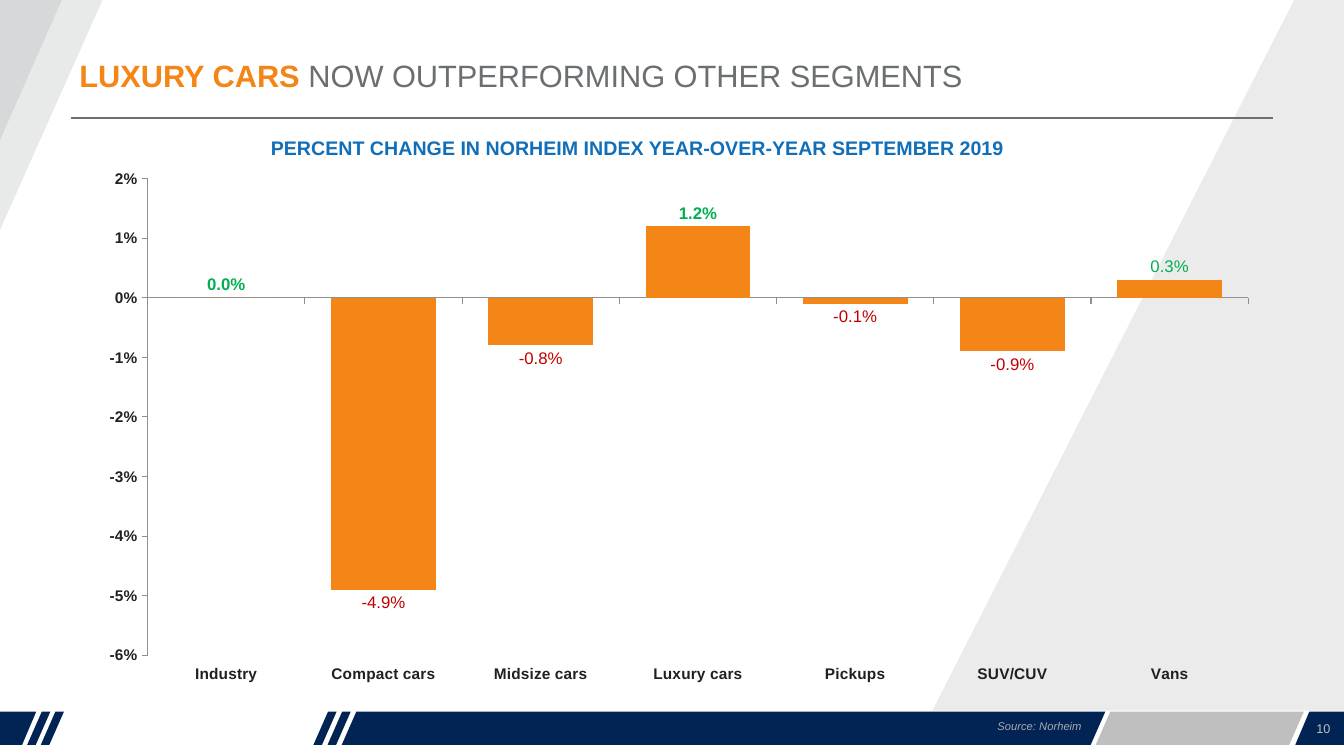
from lxml import etree
from pptx import Presentation, util as u
from pptx.chart.data import CategoryChartData
from pptx.dml.color import RGBColor
from pptx.enum import chart as ch, shapes, text
from pptx.oxml import parse_xml
from pptx.oxml.ns import nsdecls, qn

NAVY, ORANGE, GREY, SILVER = "022454", "F38617", "6C6F71", "BFBFBF"
GREEN, RED, AXIS = "00B050", "C00000", "909090"
CELL = 0.1  # inches per grid column and row


def rgb(value):
    return RGBColor.from_string(value)


def grid(cells):
    return u.Inches(cells * CELL)


def style_font(font, color, **formats):
    for name, value in {"name": "Arial", "bold": False, **formats}.items():
        setattr(font, name, u.Pt(value) if name == "size" else value)
    font.color.rgb = rgb(color)


class Deck:
    def __init__(self, cols, rows):
        self.prs = Presentation()
        self.prs.slide_width, self.prs.slide_height = grid(cols), grid(rows)
        self.s = self.prs.slides.add_slide(self.prs.slide_layouts[6])

    def polygon(self, points, color, alpha=None):
        start, *rest = [(grid(x), grid(y)) for x, y in points]
        builder = self.s.shapes.build_freeform(*start)
        builder.add_line_segments(rest, close=True)
        sp = builder.convert_to_shape()
        sp.shadow.inherit = False
        sp.fill.solid()
        sp.fill.fore_color.rgb = rgb(color)
        sp.line.fill.background()
        if alpha is not None:
            clr = sp.fill._xPr.find(".//" + qn("a:srgbClr"))
            etree.SubElement(clr, qn("a:alpha"), val=str(alpha * 1000))

    def rule(self, x1, x2, y, color):
        line = self.s.shapes.add_connector(
            shapes.MSO_CONNECTOR.STRAIGHT, grid(x1), grid(y), grid(x2), grid(y))
        line.line.color.rgb = rgb(color)
        line.line.width = u.Pt(1)
        etree.SubElement(line._element.spPr, qn("a:effectLst"))

    def text(self, box, runs, align="LEFT", anchor="MIDDLE", wrap=True, spacing=1.0):
        tf = self.s.shapes.add_textbox(*map(grid, box)).text_frame
        tf.word_wrap = wrap
        tf.vertical_anchor = getattr(text.MSO_ANCHOR, anchor)
        p = tf.paragraphs[0]
        p.alignment = getattr(text.PP_ALIGN, align)
        p.line_spacing = spacing
        for words, color, formats in runs:
            r = p.add_run()
            r.text = words
            style_font(r.font, color, **formats)

    def columns(self, box, values, layout, light_labels):
        data = CategoryChartData(number_format="0.0%")
        data.categories = list(values)
        data.add_series("Series 1", values.values())
        chart = self.s.shapes.add_chart(
            ch.XL_CHART_TYPE.COLUMN_CLUSTERED, *map(grid, box), data).chart
        chart.has_title = chart.has_legend = False
        style_font(chart.font, "414141", size=18)

        # Axes
        for axis in (chart.category_axis, chart.value_axis):
            axis.has_major_gridlines = False
            axis.major_tick_mark = ch.XL_TICK_MARK.OUTSIDE
            axis.format.line.color.rgb = rgb(AXIS)
            axis.format.line.width = u.Pt(0.75)
            style_font(axis.tick_labels.font, "202020", size=11, bold=True)
        chart.category_axis.tick_label_position = ch.XL_TICK_LABEL_POSITION.LOW
        scale = {"minimum_scale": -0.06, "maximum_scale": 0.02, "major_unit": 0.01}
        for name, value in scale.items():
            setattr(chart.value_axis, name, value)
        labels = chart.value_axis.tick_labels
        labels.number_format, labels.number_format_is_linked = "0%", False

        # Columns
        plot = chart.plots[0]
        plot.gap_width, plot.vary_by_categories = 50, False
        series = plot.series[0]
        series.invert_if_negative = False
        series.format.fill.solid()
        series.format.fill.fore_color.rgb = rgb(ORANGE)

        # Value labels
        labels = series.data_labels
        labels.show_value = True
        labels.number_format, labels.number_format_is_linked = "0.0%", False
        labels.position = ch.XL_LABEL_POSITION.OUTSIDE_END
        style_font(labels.font, GREEN, size=12, bold=True)
        for i, (name, value) in enumerate(values.items()):
            if name in light_labels:
                label = series.points[i].data_label
                r = label.text_frame.paragraphs[0].add_run()
                r.text = f"{value:.1%}"
                style_font(r.font, RED if value < 0 else GREEN, size=12)
                label.position = ch.XL_LABEL_POSITION.OUTSIDE_END

        # Inner plot area as shares of the chart
        area = chart._chartSpace.chart.plotArea
        for old in area.findall(qn("c:layout")):
            area.remove(old)
        places = "".join(f'<c:{k} val="{v}"/>' for k, v in zip("xywh", layout))
        area.insert(0, parse_xml(
            f'<c:layout {nsdecls("c")}><c:manualLayout><c:layoutTarget val="inner"/>'
            f'<c:xMode val="edge"/><c:yMode val="edge"/>{places}'
            "</c:manualLayout></c:layout>"))


def main():
    deck = Deck(133.33, 75)

    # Background wedge and title rule
    deck.polygon([(135.1, -13.2), (135.4, 70.5), (92.5, 70.5)], "D9D9D9", 50)
    deck.rule(7, 126.3, 11.7, GREY)

    # Slanted footer bands: bottom-left and bottom-right columns
    top, bottom, slant, stripe = 70.6, 73.9, 1.45, 0.85
    bands = [(x, x + stripe, NAVY) for x in (2.7, 4.05, 31.1, 32.5)]
    bands += [(33.9, 108.2, NAVY), (108.7, 127.9, SILVER)]
    for left, right, color in bands:
        deck.polygon([(left + slant, top), (right + slant, top),
                      (right, bottom), (left, bottom)], color)
    deck.polygon([(-1, top), (3.6, top), (2.2, bottom), (-1, bottom)], NAVY)
    deck.polygon([(129.9, top), (134.2, top), (134.2, bottom), (128.5, bottom)], NAVY)

    # Corner triangles
    for x, y, width, height in ((-3.2, -1.4, 14, 31.4), (-3.1, -0.6, 9.5, 21.5)):
        deck.polygon([(x, y), (x + width, y), (x, y + height)], "A6A9AA", 25)

    # Title, source and page number
    deck.text((6.9, 3.7, 126.2, 8.3),
              [("LUXURY CARS ", ORANGE, {"size": 22, "bold": True}),
               ("NOW OUTPERFORMING OTHER SEGMENTS", GREY, {"size": 22})], spacing=0.8)
    deck.text((35.2, 70.5, 73.1, 3.3),
              [("Source: Norheim", "A7AAAD", {"size": 8, "italic": True})],
              "RIGHT", spacing=0.9)
    deck.text((129.3, 70.6, 4, 3.4), [("10", SILVER, {"size": 9})], "CENTER")

    # Chart with its heading
    deck.text((25.5, 13, 75.5, 3.4),
              [("PERCENT CHANGE IN NORHEIM INDEX YEAR-OVER-YEAR SEPTEMBER 2019",
                "116FBA", {"size": 14, "bold": True})], "CENTER", "TOP", wrap=False)
    changes = {"Industry": 0, "Compact cars": -0.049, "Midsize cars": -0.008,
               "Luxury cars": 0.012, "Pickups": -0.001, "SUV/CUV": -0.009, "Vans": 0.003}
    deck.columns((6.9, 16.1, 119.2, 54.4), changes, (0.065, 0.03, 0.916, 0.869),
                 set(changes) - {"Industry", "Luxury cars"})

    deck.prs.save("out.pptx")


if __name__ == "__main__":
    main()
